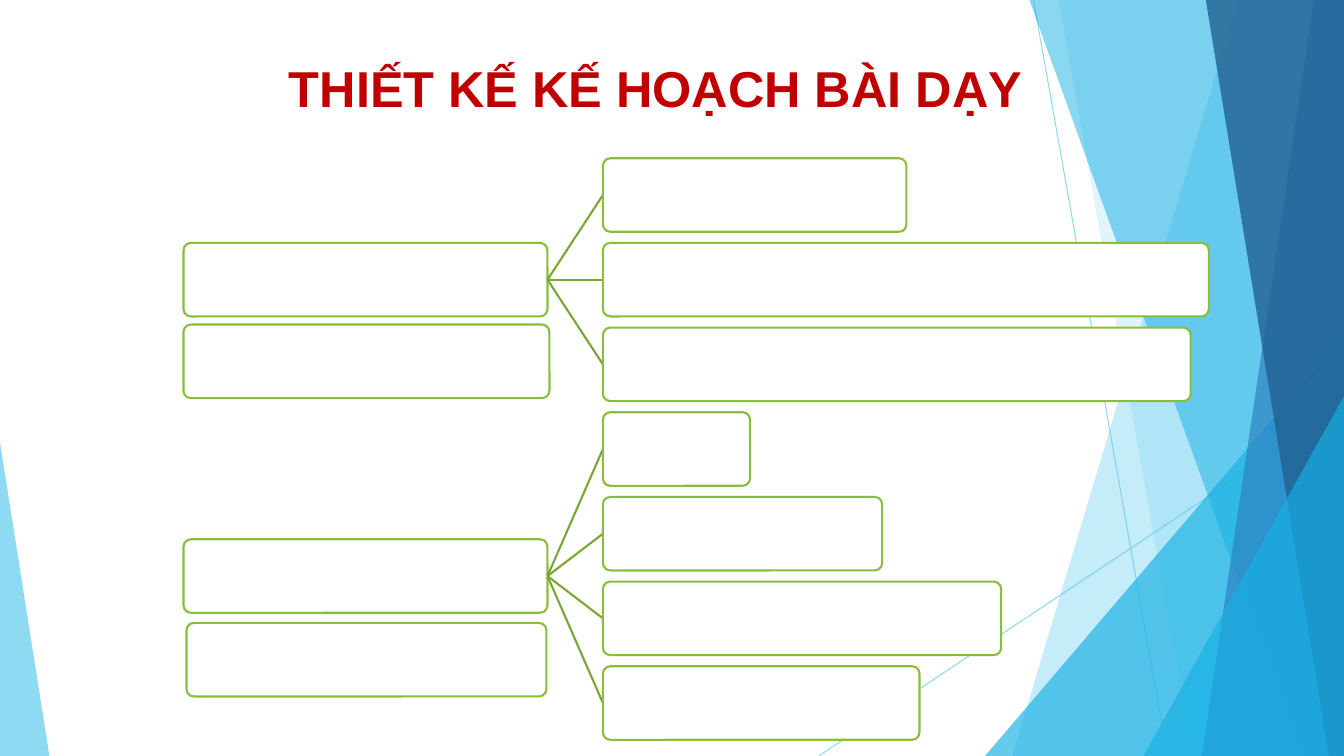
from lxml import etree
from pptx import Presentation
from pptx.dml.color import RGBColor
from pptx.enum.shapes import MSO_CONNECTOR, MSO_SHAPE
from pptx.enum.text import MSO_ANCHOR, PP_ALIGN
from pptx.oxml.ns import qn
from pptx.util import Inches, Pt

TRIANGLE = MSO_SHAPE.ISOSCELES_TRIANGLE
ROUNDED = MSO_SHAPE.ROUNDED_RECTANGLE
STRAIGHT = MSO_CONNECTOR.STRAIGHT
MIDDLE = MSO_ANCHOR.MIDDLE
CENTER = PP_ALIGN.CENTER

WIDTH, HEIGHT = 13.33, 7.5
BOX_H, ROW_STEP = 0.73, 0.84
CHILD_X = 4.16


def rgb(color):
    return RGBColor.from_string(color)


def set_alpha(color_format_parent, percent):
    color = next(color_format_parent.iter(qn("a:srgbClr")))
    etree.SubElement(color, qn("a:alpha")).set("val", str(percent * 1000))


def paint(sp, color, alpha=100):
    sp.shadow.inherit = False
    sp.fill.solid()
    sp.fill.fore_color.rgb = rgb(color)
    if alpha < 100:
        set_alpha(sp._element.spPr, alpha)
    sp.line.fill.background()


def add_line(s, start, end, color, width, alpha=100):
    x1, y1, x2, y2 = (Inches(v) for v in (*start, *end))
    line = s.shapes.add_connector(STRAIGHT, x1, y1, x2, y2)
    line.line.color.rgb = rgb(color)
    line.line.width = Pt(width)
    if alpha < 100:
        set_alpha(line._element.spPr, alpha)
    etree.SubElement(line._element.spPr, qn("a:effectLst"))


def add_band(s, top_x, bottom_x, right, height, color, alpha):
    points = [(right, 0), (right, height), (bottom_x, height)]
    builder = s.shapes.build_freeform(Inches(top_x), 0, scale=1.0)
    builder.add_line_segments([(Inches(x), Inches(y)) for x, y in points])
    paint(builder.convert_to_shape(), color, alpha)


def add_triangle(s, x, y, w, h, apex, color, alpha):
    sp = s.shapes.add_shape(TRIANGLE, Inches(x), Inches(y), Inches(w), Inches(h))
    sp.adjustments[0] = apex
    paint(sp, color, alpha)


def add_facets(s, w, h):
    add_line(s, (w - 3.08, 0), (w - 1.75, h), "5FCBEF", 0.75, 70)
    add_line(s, (w, h - 3.47), (w - 5.21, h), "5FCBEF", 0.75, 70)
    add_band(s, w - 1.05, w - 3.29, w, h, "5FCBEF", 36)
    add_band(s, w - 2.83, w - 1.5, w, h, "5FCBEF", 20)
    add_triangle(s, w - 3.56, h - 4.17, 3.56, 4.17, 1, "17B0E4", 66)
    add_band(s, w - 3.12, w - 0.42, w, h, "17B0E4", 50)
    add_band(s, w - 0.3, w - 1.41, w, h, "2E83C3", 70)
    add_band(s, w - 1.37, w - 0.15, w, h, "226292", 80)
    add_triangle(s, w - 1.99, h - 3.57, 1.99, 3.57, 1, "17B0E4", 66)
    add_triangle(s, 0, h - 3.11, 0.49, 3.11, 0, "5FCBEF", 70)


def add_title(s, x, y, w, h):
    tf = s.shapes.add_textbox(Inches(x), Inches(y), Inches(w), Inches(h)).text_frame
    tf.word_wrap = True
    tf.vertical_anchor = MIDDLE
    p = tf.paragraphs[0]
    p.alignment = CENTER
    r = p.add_run()
    r.text = "THIẾT KẾ KẾ HOẠCH BÀI DẠY "
    r.font.name = "Arial"
    r.font.size = Pt(36)
    r.font.bold = True
    r.font.color.rgb = rgb("C00000")


def add_box(s, x, y, w):
    sp = s.shapes.add_shape(ROUNDED, Inches(x), Inches(y), Inches(w), Inches(BOX_H))
    sp.adjustments[0] = 0.1
    paint(sp, "FFFFFF")
    sp.line.color.rgb = rgb("88BE3B")
    sp.line.width = Pt(1.5)


def add_branch(s, x, y, child_widths, root_w, extra):
    root_y = y + ROW_STEP * (len(child_widths) - 1) / 2
    add_box(s, x, root_y, root_w)
    for i, child_w in enumerate(child_widths):
        child_y = y + i * ROW_STEP
        start = (x + root_w, root_y + BOX_H / 2)
        add_line(s, start, (x + CHILD_X, child_y + BOX_H / 2), "78A734", 1.5)
        add_box(s, x + CHILD_X, child_y, child_w)
    dx, dy, extra_w = extra
    add_box(s, x + dx, root_y + dy, extra_w)


def main():
    prs = Presentation()
    prs.slide_width, prs.slide_height = Inches(WIDTH), Inches(HEIGHT)
    s = prs.slides.add_slide(prs.slide_layouts[6])
    add_facets(s, WIDTH, HEIGHT)
    add_title(s, 0.25, 0.24, 12.64, 1.25)
    upper = [3.01, 6.01, 5.83]
    lower = [1.46, 2.77, 3.95, 3.14]
    top = 1.57
    add_branch(s, 1.82, top, upper, 3.61, (0, 0.81, 3.63))
    add_branch(s, 1.82, top + len(upper) * ROW_STEP, lower, 3.61, (0.03, 0.83, 3.57))
    prs.save("out.pptx")


if __name__ == "__main__":
    main()
